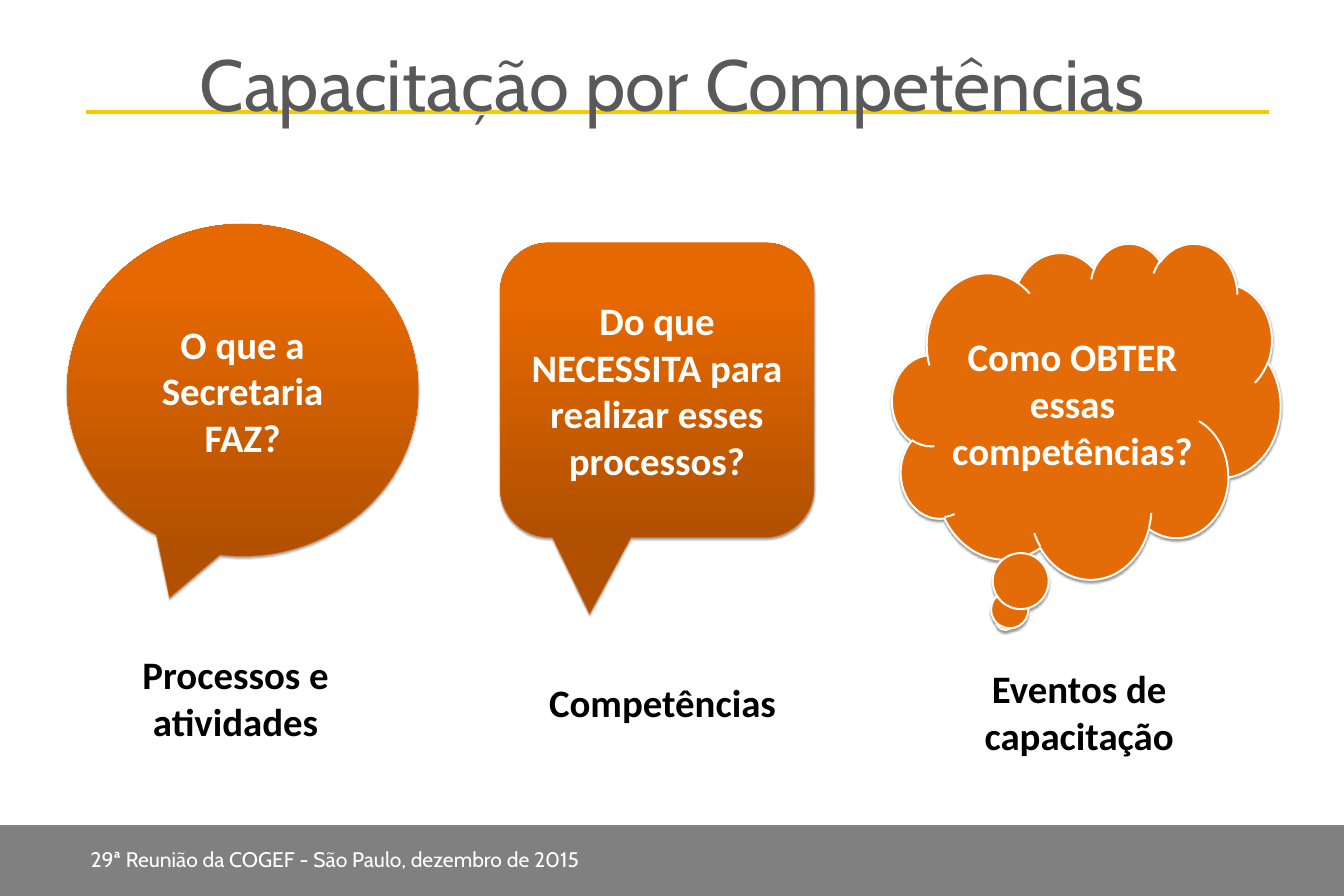
from copy import deepcopy

from lxml import etree
from pptx import Presentation
from pptx import util as u
from pptx.dml.color import RGBColor
from pptx.enum import shapes, text
from pptx.oxml import ns

WHITE, BLACK, GRAY, DARK_GRAY, YELLOW = "FFFFFF", "000000", "808080", "595959", "F9C800"
ORANGE, ORANGE_LINE = "E36C09", "E36903"
ORANGE_STOPS = [(0, "B05000"), (0.8, "E56800"), (1, "E66800")]


def paint(target, color):
    target.rgb = RGBColor.from_string(color)


def write(frame, words, size=59, font="Calibri", color=WHITE, bold=True,
          align=text.PP_ALIGN.CENTER, anchor=text.MSO_ANCHOR.MIDDLE,
          fit=text.MSO_AUTO_SIZE.NONE):
    frame.word_wrap = True
    frame.auto_size = fit
    frame.vertical_anchor = anchor
    paragraph = frame.paragraphs[0]
    paragraph.alignment = align
    paragraph.space_before = u.Pt(0)
    run = paragraph.add_run()
    run.text = words
    run.font.size = u.Pt(size)
    run.font.name = font
    run.font.bold = bold
    paint(run.font.color, color)


class Slide:
    def __init__(self, deck):
        self.slide = deck.slides.add_slide(deck.slide_layouts[1])
        self.shapes = self.slide.shapes

    def placeholder(self, index, box, words, **style):
        holder = self.slide.placeholders[index]
        holder.left, holder.top, holder.width, holder.height = map(u.Cm, box)
        self.shapes._spTree.append(holder._element)
        props = holder.text_frame.paragraphs[0]._p.get_or_add_pPr()
        props.set("marL", "0")
        props.set("indent", "0")
        etree.SubElement(props, ns.qn("a:buNone"))
        write(holder.text_frame, words, font="Cabin", bold=False, **style)

    def shape(self, kind, box, color):
        figure = self.shapes.add_shape(kind, *map(u.Cm, box))
        figure.shadow.inherit = False
        figure.fill.solid()
        paint(figure.fill.fore_color, color)
        figure.line.fill.background()
        return figure

    def rule(self, left, right, top, color, width):
        line = self.shapes.add_connector(
            shapes.MSO_CONNECTOR.STRAIGHT, u.Cm(left), u.Cm(top), u.Cm(right), u.Cm(top))
        paint(line.line.color, color)
        line.line.width = u.Pt(width)
        etree.SubElement(line._element.spPr, ns.qn("a:effectLst"))

    def callout(self, kind, box, words, stops=None, outline=ORANGE_LINE,
                width=0.75, tail=(), opacity=35, drop=1.8):
        bubble = self.shape(kind, box, ORANGE)
        for index, value in enumerate(tail):
            bubble.adjustments[index] = value
        if stops:
            self.gradient(bubble, stops)
        paint(bubble.line.color, outline)
        bubble.line.width = u.Pt(width)
        self.shadow(bubble, opacity, drop)
        write(bubble.text_frame, words)

    def gradient(self, bubble, stops):
        bubble.fill.gradient()
        bubble.fill.gradient_angle = 90
        stop_list = bubble._element.spPr.find(".//" + ns.qn("a:gsLst"))
        stop_list.append(deepcopy(stop_list[-1]))
        for stop, (position, color) in zip(bubble.fill.gradient_stops, stops):
            stop.position = position
            paint(stop.color, color)

    def shadow(self, bubble, opacity, drop):
        effects = bubble._element.spPr.find(ns.qn("a:effectLst"))
        outer = etree.SubElement(
            effects, ns.qn("a:outerShdw"), blurRad=str(u.Pt(3.1)),
            dist=str(u.Pt(drop)), dir="5400000", rotWithShape="0")
        tint = etree.SubElement(outer, ns.qn("a:srgbClr"), val=BLACK)
        etree.SubElement(tint, ns.qn("a:alpha"), val=str(opacity * 1000))

    def label(self, box, words):
        caption = self.shapes.add_textbox(*map(u.Cm, box))
        write(caption.text_frame, words, color=BLACK, anchor=text.MSO_ANCHOR.TOP,
              fit=text.MSO_AUTO_SIZE.SHAPE_TO_FIT_TEXT)


def main():
    deck = Presentation()
    deck.slide_width, deck.slide_height = u.Cm(72), u.Cm(48)
    page = Slide(deck)
    kinds = shapes.MSO_SHAPE

    page.shape(kinds.RECTANGLE, (0, 44.2, 72, 3.8), GRAY)
    page.rule(4.6, 68, 6, YELLOW, 6)
    page.placeholder(1, (4.6, 45.2, 43.8, 1.6), "29ª Reunião da COGEF - São Paulo, dezembro de 2015",
                     size=32, align=text.PP_ALIGN.LEFT)
    page.placeholder(0, (3.6, 1.95, 64.8, 3.5), "Capacitação por Competências",
                     size=110, color=DARK_GRAY, anchor=text.MSO_ANCHOR.TOP)

    page.callout(kinds.OVAL_CALLOUT, (3.6, 12, 18.8, 17.8), "O que a Secretaria FAZ?",
                 stops=ORANGE_STOPS)
    page.callout(kinds.ROUNDED_RECTANGULAR_CALLOUT, (26.8, 13, 16.8, 15.8),
                 "Do que NECESSITA para realizar esses processos?",
                 stops=ORANGE_STOPS, tail=(-0.215, 0.759, 0.167))
    page.callout(kinds.CLOUD_CALLOUT, (47.8, 13, 20.8, 18), "Como OBTER essas competências?",
                 outline=WHITE, width=3, opacity=38, drop=1.6)

    page.label((3.53, 34.75, 18.2, 5.3), "Processos e atividades")
    page.label((26, 36.22, 19, 2.77), "Competências")
    page.label((48.72, 35.5, 18.2, 5.3), "Eventos de capacitação")

    deck.save("out.pptx")


if __name__ == "__main__":
    main()
